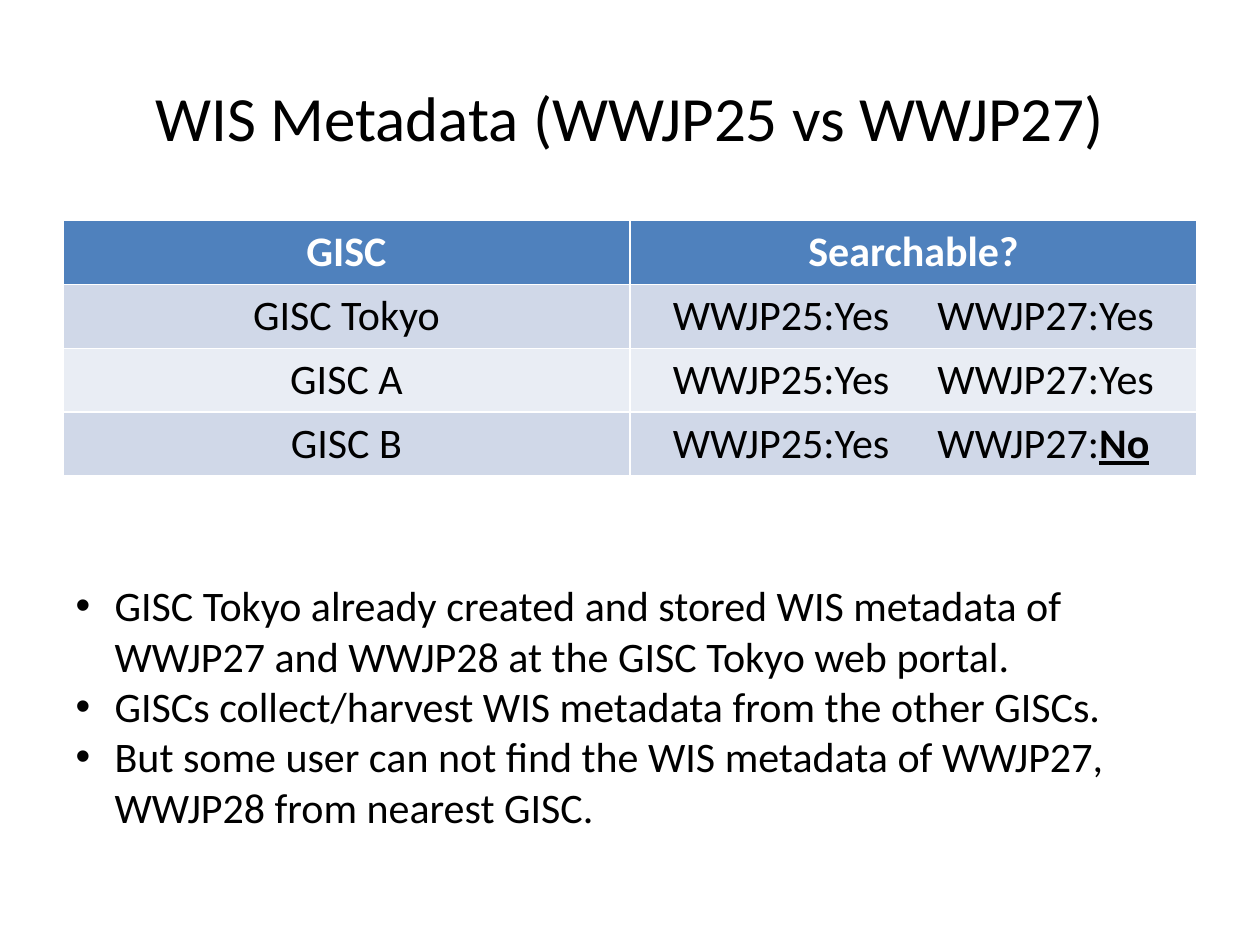
"""Build the WIS metadata comparison slide."""
from lxml import etree
from pptx import Presentation
from pptx.dml.color import RGBColor
from pptx.enum.text import MSO_ANCHOR, MSO_AUTO_SIZE, PP_ALIGN
from pptx.oxml.ns import qn
from pptx.util import Inches, Pt

CENTER, LEFT = PP_ALIGN.CENTER, PP_ALIGN.LEFT
MIDDLE, TOP = MSO_ANCHOR.MIDDLE, MSO_ANCHOR.TOP
NO_AUTOFIT = MSO_AUTO_SIZE.NONE

BLACK = RGBColor(0x00, 0x00, 0x00)
WHITE = RGBColor(0xFF, 0xFF, 0xFF)
HEADER_BLUE = RGBColor(0x4F, 0x81, 0xBD)
BANDS = (RGBColor(0xD0, 0xD8, 0xE8), RGBColor(0xE9, 0xED, 0xF4))

SLIDE_WIDTH, SLIDE_HEIGHT = Inches(10), Inches(7.5)
MARGIN = Inches(0.5)
CONTENT_WIDTH = SLIDE_WIDTH - 2 * MARGIN
ROW_HEIGHT = Inches(0.5)
CELL_INSET = Inches(0.14)
RESULT_INSET = Inches(0.34)
SECOND_RESULT = Inches(2.1)
BULLET_INDENT = Inches(0.31)

HEADINGS = ("GISC", "Searchable?")
SEARCH_RESULTS = (
    ("GISC Tokyo", "Yes", "Yes"),
    ("GISC A", "Yes", "Yes"),
    ("GISC B", "Yes", "No"),
)
FINDINGS = (
    "GISC Tokyo already created and stored WIS metadata of WWJP27 and WWJP28 "
    "at the GISC Tokyo web portal.",
    "GISCs collect/harvest WIS metadata from the other GISCs.",
    "But some user can not find the WIS metadata of WWJP27, WWJP28 from nearest GISC.",
)


def place(shape, top, height):
    shape.left, shape.top = MARGIN, top
    shape.width, shape.height = CONTENT_WIDTH, height


def style(paragraph, size=24, color=BLACK, align=LEFT, bold=False):
    paragraph.alignment = align
    font = paragraph.font
    font.name, font.size, font.bold = "Calibri", Pt(size), bold
    font.color.rgb = color


def fill_title(title):
    place(title, Inches(0.3), Inches(1.25))
    title.text_frame.vertical_anchor = MIDDLE
    title.text_frame.text = "WIS Metadata (WWJP25 vs WWJP27)"
    style(title.text_frame.paragraphs[0], size=36, align=CENTER)


def fill_findings(body):
    place(body, Inches(4.55), Inches(2.12))
    frame = body.text_frame
    frame.auto_size, frame.vertical_anchor = NO_AUTOFIT, TOP
    frame.text = "\n".join(FINDINGS)
    for paragraph in frame.paragraphs:
        properties = paragraph._p.get_or_add_pPr()
        properties.set("marL", str(BULLET_INDENT))
        properties.set("indent", str(-BULLET_INDENT))
        paragraph.space_before = Pt(0)
        etree.SubElement(properties, qn("a:buChar"), char="•")
        style(paragraph)


def fill_cell(cell, text, background, **text_style):
    cell.fill.solid()
    cell.fill.fore_color.rgb = background
    cell.margin_left = cell.margin_right = CELL_INSET
    paragraph = cell.text_frame.paragraphs[0]
    paragraph.add_run().text = text
    style(paragraph, **text_style)
    return paragraph


def fill_result(cell, first, second, background):
    stops = etree.SubElement(
        cell.text_frame.paragraphs[0]._p.get_or_add_pPr(), qn("a:tabLst"))
    etree.SubElement(stops, qn("a:tab"), pos=str(SECOND_RESULT), algn="l")
    paragraph = fill_cell(cell, f"WWJP25:{first}\tWWJP27:", background)
    cell.margin_left = RESULT_INSET
    answer = paragraph.add_run()
    answer.text = second
    if second == "No":
        answer.font.bold = answer.font.underline = True


def add_search_table(slide):
    row_count = len(SEARCH_RESULTS) + 1
    table = slide.shapes.add_table(
        row_count, len(HEADINGS), MARGIN, Inches(1.75),
        CONTENT_WIDTH, ROW_HEIGHT * row_count).table
    for column, heading in enumerate(HEADINGS):
        fill_cell(table.cell(0, column), heading, HEADER_BLUE,
                  color=WHITE, align=CENTER, bold=True)
    for row, (centre, first, second) in enumerate(SEARCH_RESULTS, start=1):
        band = BANDS[(row - 1) % len(BANDS)]
        fill_cell(table.cell(row, 0), centre, band, align=CENTER)
        fill_result(table.cell(row, 1), first, second, band)


def main():
    deck = Presentation()
    deck.slide_width, deck.slide_height = SLIDE_WIDTH, SLIDE_HEIGHT
    slide = deck.slides.add_slide(deck.slide_layouts[1])
    fill_title(slide.shapes.title)
    fill_findings(slide.placeholders[1])
    add_search_table(slide)
    deck.save("out.pptx")


if __name__ == "__main__":
    main()
